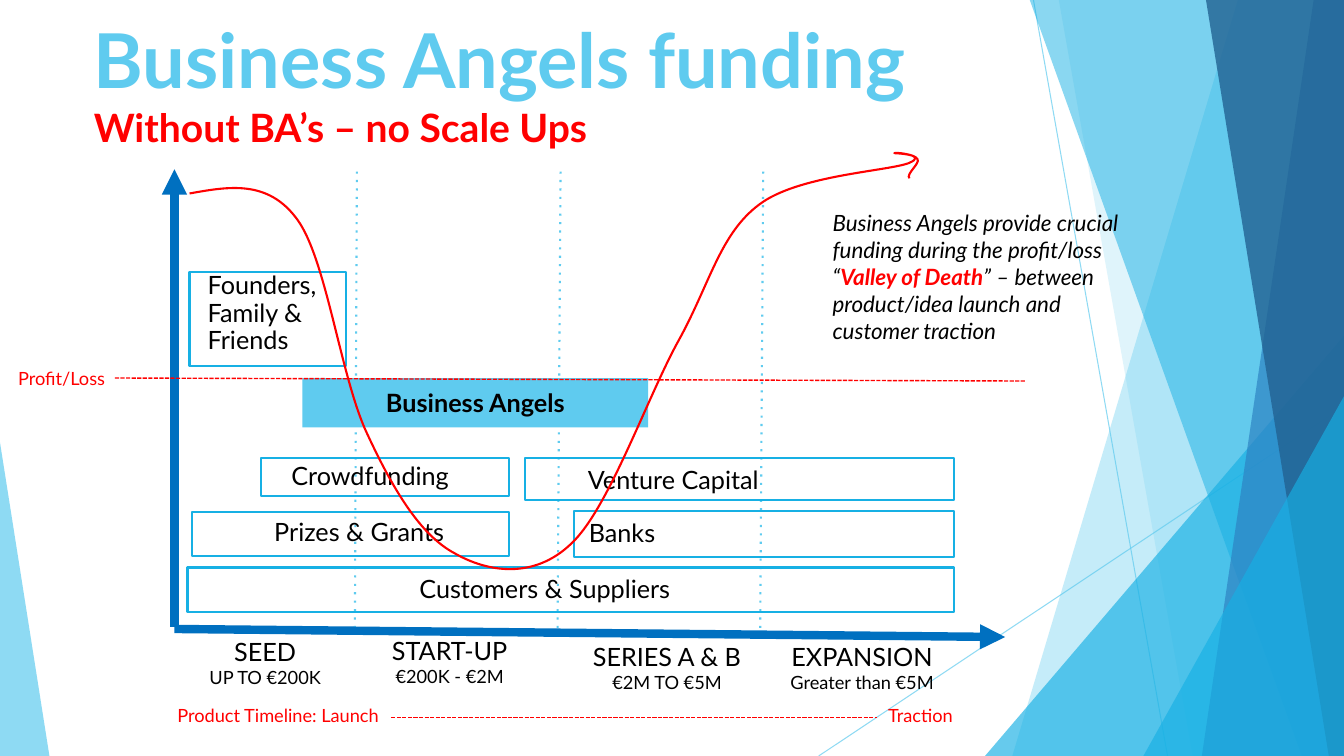
from pptx import Presentation
from pptx.dml.color import RGBColor
from pptx.enum.shapes import MSO_CONNECTOR, MSO_SHAPE
from pptx.enum.text import MSO_ANCHOR as ANC, MSO_AUTO_SIZE as FIT, PP_ALIGN as AL
from pptx.oxml.ns import qn
from pptx.util import Inches, Pt
from lxml.etree import SubElement

FONT = "Lato"
SKY = RGBColor(0x5F, 0xCB, 0xEF)
CYAN = RGBColor(0x17, 0xB0, 0xE4)
STEEL = RGBColor(0x2E, 0x83, 0xC3)
NAVY = RGBColor(0x22, 0x62, 0x92)
AXIS = RGBColor(0x00, 0x70, 0xC0)
RED = RGBColor(0xFF, 0, 0)
BLACK = RGBColor(0, 0, 0)


class Deck:
    def __init__(self):
        self.prs = Presentation()
        self.prs.slide_width, self.prs.slide_height = Inches(13.33), Inches(7.5)
        self.s = self.prs.slides.add_slide(self.prs.slide_layouts[5])

    def fade(self, fill, alpha):
        clr = fill._xPr.find(qn("a:solidFill"))[0]
        SubElement(clr, qn("a:alpha"), val=str(alpha * 1000))

    def style(self, sp, fill=None, alpha=None, line=None, width=1.5):
        sp.shadow.inherit = False
        if fill is None:
            sp.fill.background()
        else:
            sp.fill.solid()
            sp.fill.fore_color.rgb = fill
            if alpha:
                self.fade(sp.fill, alpha)
        if line is None:
            sp.line.fill.background()
        else:
            sp.line.color.rgb = line
            sp.line.width = Pt(width)
        return sp

    def shape(self, kind, box, adj=None, **look):
        sp = self.s.shapes.add_shape(kind, *map(Inches, box))
        if adj is not None:
            sp.adjustments[0] = adj
        return self.style(sp, **look)

    def outline(self, points, close=True, **look):
        pts = [(Inches(x), Inches(y)) for x, y in points]
        fb = self.s.shapes.build_freeform(*pts[0])
        fb.add_line_segments(pts[1:], close=close)
        return self.style(fb.convert_to_shape(), **look)

    def curve(self, points, **look):
        sp = self.outline(points, close=False, **look)
        path = next(sp._element.iter(qn("a:path")))
        steps = path.findall(qn("a:lnTo"))
        for i in range(0, len(steps), 3):
            bez = SubElement(path, qn("a:cubicBezTo"))
            for step in steps[i:i + 3]:
                bez.append(step[0])
                path.remove(step)

    def line(self, start, end, color, width, dash=None, arrow=False, alpha=None):
        c = self.s.shapes.add_connector(
            MSO_CONNECTOR.STRAIGHT, *map(Inches, start + end))
        c.line.color.rgb = color
        c.line.width = Pt(width)
        if alpha:
            self.fade(c.line.fill, alpha)
        sp_pr = c._element.spPr
        ln = sp_pr.find(qn("a:ln"))
        if dash:
            SubElement(ln, qn("a:prstDash"), val=dash)
        if arrow:
            SubElement(ln, qn("a:tailEnd"), type="triangle")
        SubElement(sp_pr, qn("a:effectLst"))

    def run(self, p, text, size, color=BLACK, bold=False, italic=False):
        r = p.add_run()
        r.text = text
        f = r.font
        f.name, f.size, f.bold, f.italic = FONT, Pt(size), bold, italic
        f.color.rgb = color

    def frame(self, sp, inset=0, anchor=ANC.TOP):
        tf = sp.text_frame
        tf.word_wrap = True
        tf.vertical_anchor = anchor
        tf.margin_left = tf.margin_right = Inches(inset)
        tf.margin_top = tf.margin_bottom = Inches(inset)
        return tf

    def text(self, box, inset=0, anchor=ANC.TOP):
        return self.frame(self.s.shapes.add_textbox(*map(Inches, box)), inset, anchor)

    def label(self, box, *lines):
        tf = self.text(box)
        for i, words in enumerate(lines):
            p = tf.add_paragraph() if i else tf.paragraphs[0]
            p.line_spacing = 0.9
            self.run(p, words, 18)

    def stage(self, box, name, amount):
        p = self.text(box, 0.05, ANC.MIDDLE).paragraphs[0]
        p.alignment = AL.CENTER
        self.run(p, name, 18)
        p.add_line_break()
        self.run(p, amount, 13)

    def title(self, box, head, sub):
        sp = self.s.shapes.title
        sp.left, sp.top, sp.width, sp.height = map(Inches, box)
        tf = self.frame(sp)
        tf.auto_size = FIT.NONE
        tf.margin_left = tf.margin_right = Inches(0.1)
        tf.margin_top = Inches(0.05)
        p = tf.paragraphs[0]
        p.alignment = AL.LEFT
        self.run(p, head, 54, SKY, bold=True)
        p.add_line_break()
        self.run(p, sub, 27.9, RED, bold=True)


def backdrop(d):
    d.line((10.25, 0), (11.58, 7.5), SKY, 0.75, alpha=70)
    d.line((13.33, 4.03), (8.12, 7.5), SKY, 0.75, alpha=70)

    def band(top, bottom, color, alpha):
        d.outline([(top, -0.01), (13.33, -0.01), (13.33, 7.5), (bottom, 7.5)],
                  fill=color, alpha=alpha)

    def wedge(box, apex, color, alpha):
        d.shape(MSO_SHAPE.ISOSCELES_TRIANGLE, box, apex, fill=color, alpha=alpha)

    band(12.28, 10.04, SKY, 36)
    band(10.5, 11.83, SKY, 20)
    wedge((9.77, 3.33, 3.56, 4.17), 1, CYAN, 66)
    band(10.21, 12.91, CYAN, 50)
    band(13.03, 11.92, STEEL, 70)
    band(11.96, 13.18, NAVY, 80)
    wedge((11.34, 3.93, 1.99, 3.57), 1, CYAN, 66)
    wedge((0, 4.39, 0.49, 3.11), 0, SKY, 70)


def chart(d):
    d.line((1.73, 6.22), (1.73, 1.68), AXIS, 6, arrow=True)
    for foot, top in [(3.52, 3.54), (5.53, 5.56), (7.54, 7.57)]:
        d.line((foot, 6.23), (top, 1.68), SKY, 1.5, "dot")

    for box in [(1.86, 5.63, 7.6, 0.44), (1.9, 5.08, 3.15, 0.44),
                (2.59, 4.54, 2.46, 0.38), (5.21, 4.54, 4.25, 0.42),
                (5.69, 5.07, 3.77, 0.46), (1.88, 2.7, 1.55, 0.93)]:
        d.shape(MSO_SHAPE.RECTANGLE, box, line=CYAN)
    angels = d.shape(MSO_SHAPE.RECTANGLE, (3, 3.75, 3.43, 0.49), fill=SKY)
    p = d.frame(angels, 0, ANC.MIDDLE).paragraphs[0]
    p.alignment = AL.CENTER
    d.run(p, "Business Angels", 18, bold=True)

    d.label((2.06, 2.71, 1.42, 1.05), "Founders,", "Family &", "Friends")
    d.label((2.89, 4.6, 1.67, 0.24), "Crowdfunding")
    d.label((5.83, 4.64, 1.82, 0.29), "Venture Capital")
    d.label((2.72, 5.16, 1.76, 0.4), "Prizes & Grants")
    d.label((5.84, 5.17, 2.75, 0.4), "Banks")
    d.label((4.16, 5.72, 2.8, 0.4), "Customers & Suppliers")

    d.stage((1.81, 6.27, 1.64, 0.6), "SEED", "UP TO €200K")
    d.stage((3.64, 6.26, 1.64, 0.6), "START-UP", "€200K - €2M")
    d.stage((5.69, 6.32, 1.85, 0.6), "SERIES A & B", "€2M TO €5M")
    d.stage((7.73, 6.32, 1.64, 0.6), "EXPANSION", "Greater than €5M")
    d.line((1.73, 6.24), (9.97, 6.32), AXIS, 6, arrow=True)

    d.curve([(1.88, 1.92), (2.27, 1.85), (2.66, 1.78), (2.95, 2.18),
             (3.24, 2.58), (3.38, 3.75), (3.64, 4.3),
             (3.9, 4.86), (4.17, 5.31), (4.51, 5.49),
             (4.84, 5.68), (5.3, 5.75), (5.67, 5.39),
             (6.04, 5.04), (6.42, 3.94), (6.73, 3.38),
             (7.04, 2.82), (7.14, 2.32), (7.53, 2.03),
             (7.91, 1.74), (8.79, 1.7), (9.01, 1.62),
             (9.23, 1.53), (8.85, 1.52), (8.87, 1.52),
             (8.88, 1.51), (9.08, 1.53), (9.1, 1.58),
             (9.13, 1.62), (8.98, 1.73), (9.02, 1.77)], line=RED)


def notes_in_red(d):
    d.run(d.text((0.13, 3.59, 1.72, 0.37), 0.05).paragraphs[0], "Profit/Loss", 13, RED)
    d.line((1.14, 3.75), (10.17, 3.78), RED, 1, "sysDash")

    p = d.text((1.71, 6.94, 8.23, 0.37), 0.05).paragraphs[0]
    tabs = SubElement(p._p.get_or_add_pPr(), qn("a:tabLst"))
    SubElement(tabs, qn("a:tab"), pos=str(Inches(7.05)), algn="l")
    d.run(p, "Product Timeline: Launch\tTraction", 13, RED)
    d.line((3.88, 7.12), (8.7, 7.12), RED, 1, "sysDash")

    tf = d.text((8.16, 2.03, 3.27, 1.45), 0.1)
    tf.margin_top = tf.margin_bottom = Inches(0.05)
    p = tf.paragraphs[0]
    d.run(p, "Business Angels provide crucial funding during the profit/loss “",
          16, italic=True)
    d.run(p, "Valley of Death", 16, RED, bold=True, italic=True)
    d.run(p, "” – between product/idea launch and customer traction", 16, italic=True)


def main():
    d = Deck()
    backdrop(d)
    d.title((0.83, 0.08, 9.4, 0.72), "Business Angels funding",
            "Without BA’s – no Scale Ups")
    chart(d)
    notes_in_red(d)
    d.prs.save("out.pptx")


if __name__ == "__main__":
    main()
